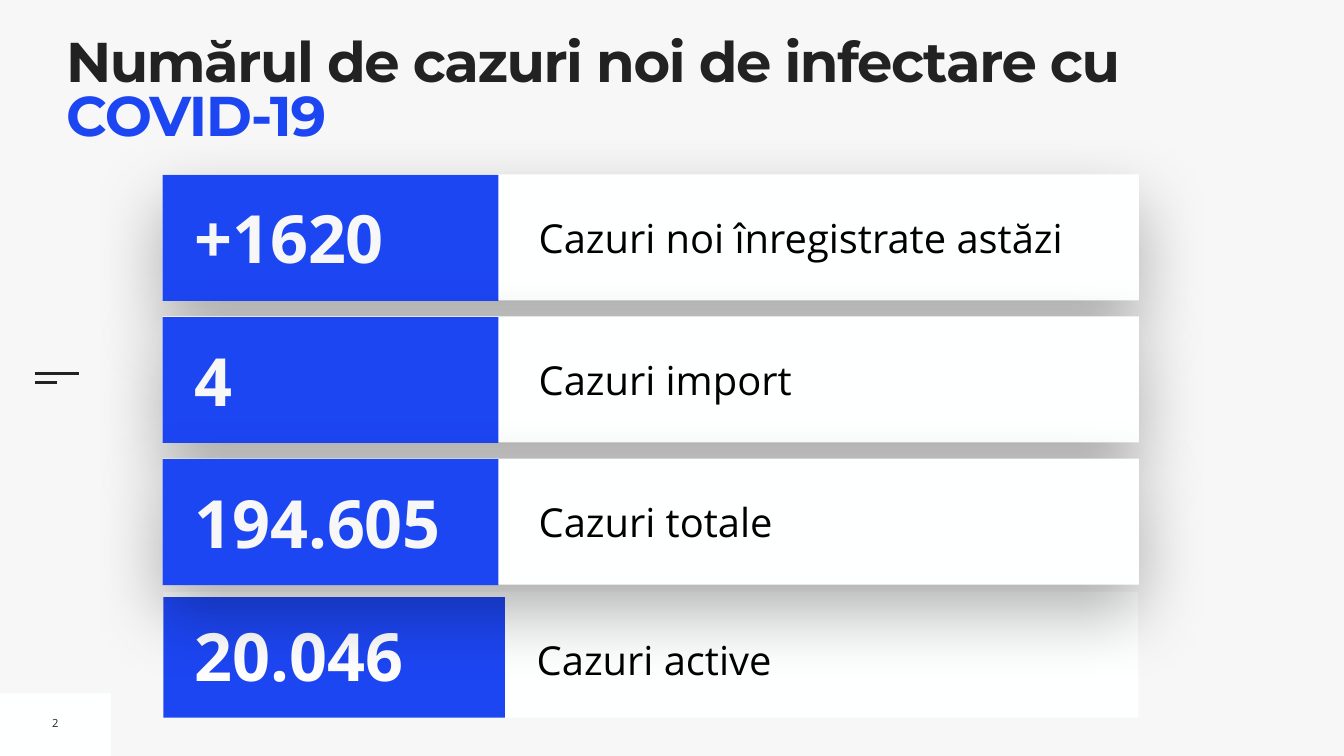
from collections import namedtuple

from lxml.etree import SubElement
from pptx import Presentation
from pptx.dml.color import RGBColor
from pptx.enum.shapes import MSO_CONNECTOR, MSO_SHAPE
from pptx.enum.text import MSO_ANCHOR as Anchor, MSO_AUTO_SIZE as AutoSize, PP_ALIGN as Align
from pptx.oxml.ns import qn
from pptx.util import Inches, Pt

COLORS = {"page": "F7F7F7", "card": "FEFFFF", "blue": "1D46F3",
          "ink": "222222", "label": "000000", "white": "FFFFFF"}
TITLE_FONT, BODY_FONT = "Montserrat", "Open Sans"
PAGE_WIDTH, PAGE_HEIGHT = 26.67, 15

Box = namedtuple("Box", "left top width height")

CARD_LEFT, CARD_WIDTH, CARD_HEIGHT = 3.23, 19.37, 2.5
FIRST_TOP, ROW_PITCH = 3.46, 2.82
ROWS = [("+1620", "Cazuri noi înregistrate astăzi"),
        ("4", "Cazuri import"),
        ("194.605", "Cazuri totale")]


def color(name):
    return RGBColor.from_string(COLORS[name])


def inches(box):
    return [Inches(length) for length in box]


def add_span(para, text, font_name, size, ink, bold=False):
    span = para.add_run()
    span.text = text
    span.font.name, span.font.size, span.font.bold = font_name, Pt(size), bold
    span.font.color.rgb = color(ink)
    return span


def set_frame(frame, inset, anchor, wrap=True):
    frame.auto_size = AutoSize.NONE
    frame.word_wrap = wrap
    frame.vertical_anchor = anchor
    frame.margin_left = frame.margin_right = Inches(inset)
    frame.margin_top = frame.margin_bottom = Inches(inset)


def add_rect(page, box, fill):
    rect = page.shapes.add_shape(MSO_SHAPE.RECTANGLE, *inches(box))
    rect.shadow.inherit = False
    rect.fill.solid()
    rect.fill.fore_color.rgb = color(fill)
    rect.line.fill.background()
    return rect


def add_shadow(shape):
    """Give the shape a wide soft shadow that falls straight down."""
    effects = shape._element.spPr.find(qn("a:effectLst"))
    shadow = SubElement(effects, qn("a:outerShdw"), blurRad=str(Pt(100)),
                        dist=str(Pt(40)), dir="5400000", rotWithShape="0")
    shade = SubElement(shadow, qn("a:srgbClr"), val="000000")
    SubElement(shade, qn("a:alpha"), val="30000")


def add_text(page, box, text, size, ink, bold=False, inset=0.1, wrap=True):
    frame = page.shapes.add_textbox(*inches(box)).text_frame
    set_frame(frame, inset, Anchor.MIDDLE, wrap)
    para = frame.paragraphs[0]
    add_span(para, text, BODY_FONT, size, ink, bold)
    return para


def add_title(page, box):
    title = page.shapes.title
    title.left, title.top, title.width, title.height = inches(box)
    set_frame(title.text_frame, 0, Anchor.TOP)
    para = title.text_frame.paragraphs[0]
    para.alignment, para.line_spacing = Align.LEFT, 0.8
    for text, ink in (("Numărul de cazuri noi de infectare cu ", "ink"),
                      ("COVID-19", "blue")):
        span = add_span(para, text, TITLE_FONT, 80, ink, bold=True)
        span.font._element.set("spc", "-200")


def add_margin_marks(page, box):
    """Draw the page number tab and the two short lines above it."""
    add_rect(page, box, "card")
    for top, length in ((7.41, 0.88), (7.59, 0.44)):
        line = page.shapes.add_connector(
            MSO_CONNECTOR.STRAIGHT, *inches((0.69, top, 0.69 + length, top)))
        line.line.color.rgb, line.line.width = color("ink"), Pt(3)
        SubElement(line._element.spPr, qn("a:effectLst"))
    number = add_text(page, Box(0.93, 14.09, 0.34, 0.51), "2", 16, "ink", wrap=False)
    number.alignment = Align.CENTER


def add_active_row(page, box):
    add_rect(page, box, "card")
    label = add_text(page, Box(box.left + 7.41, box.top + 0.58, 11.58, 1.25),
                     "Cazuri active", 57, "label", inset=0)
    label.line_spacing = 1.3
    add_rect(page, Box(box.left, box.top + 0.11, 6.78, box.height - 0.11), "blue")
    add_text(page, Box(box.left + 0.53, box.top + 0.35, 6.03, 1.8),
             "20.046", 95, "white", bold=True)


def add_row(page, box, value, label):
    add_shadow(add_rect(page, box, "card"))
    add_text(page, Box(box.left + 7.36, box.top + 0.67, 11.76, 1.16), label, 57, "label")
    add_rect(page, Box(box.left, box.top + 0.01, 6.66, box.height), "blue")
    add_text(page, Box(box.left + 0.53, box.top + 0.35, 6.03, 1.8),
             value, 95, "page", bold=True)


def main():
    deck = Presentation()
    deck.slide_width, deck.slide_height = Inches(PAGE_WIDTH), Inches(PAGE_HEIGHT)
    page = deck.slides.add_slide(deck.slide_layouts[5])
    page.background.fill.solid()
    page.background.fill.fore_color.rgb = color("page")

    add_margin_marks(page, Box(0, PAGE_HEIGHT - 1.24, 2.2, 1.24))
    add_title(page, Box(1.31, 0.78, 23.94, 1.58))
    add_active_row(page, Box(3.24, 11.74, 19.35, CARD_HEIGHT))
    for index, (value, label) in enumerate(ROWS):
        top = FIRST_TOP + index * ROW_PITCH
        add_row(page, Box(CARD_LEFT, top, CARD_WIDTH, CARD_HEIGHT), value, label)
    deck.save("out.pptx")


if __name__ == "__main__":
    main()
